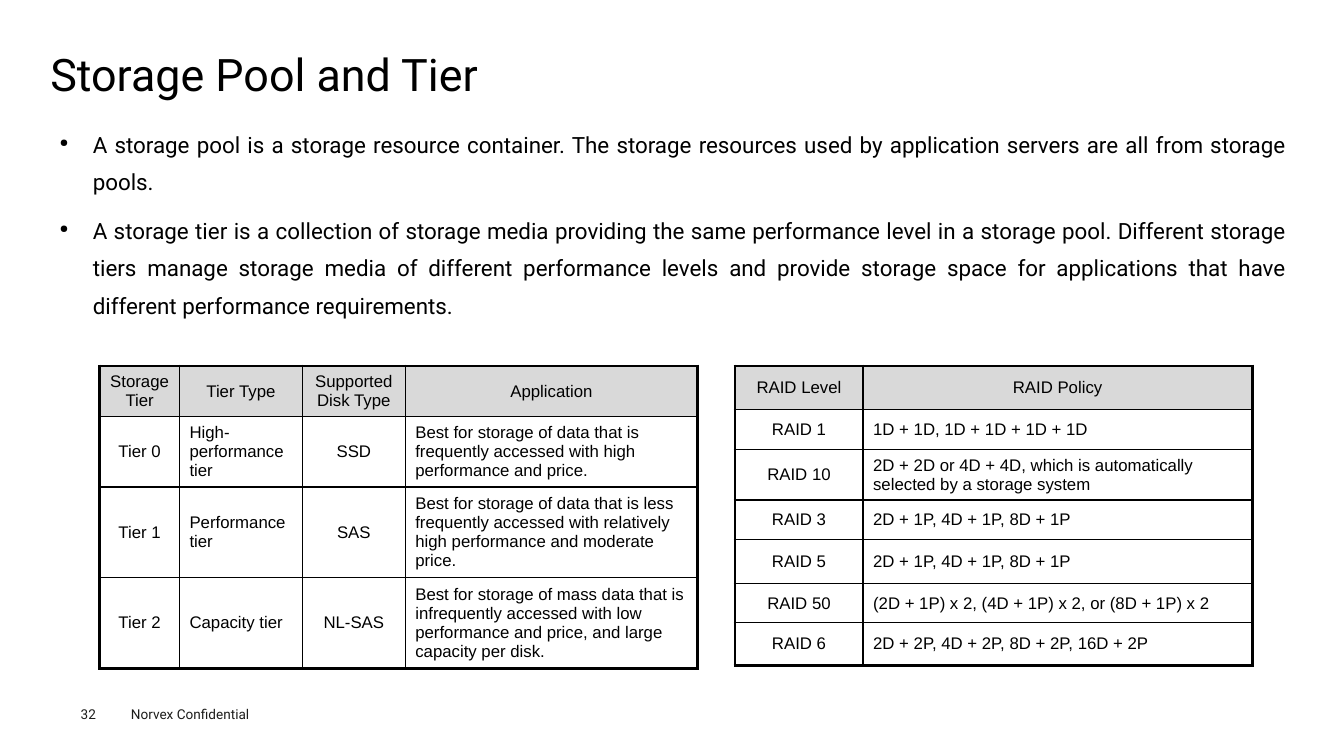
import pptx
import pptx.dml.color
import pptx.enum.text
import pptx.oxml
import pptx.oxml.ns
import pptx.util
from pptx.util import Inches

ALIGN = pptx.enum.text.PP_ALIGN
ANCHOR = pptx.enum.text.MSO_ANCHOR
BLACK, FOOTER_INK, HEADER_FILL = "000000", "1D1D1B", "D9D9D9"
OUTER, INNER = 2.25, 1

BULLETS = [
    "A storage pool is a storage resource container. The storage resources used by "
    "application servers are all from storage pools.",
    "A storage tier is a collection of storage media providing the same performance "
    "level in a storage pool. Different storage tiers manage storage media of different "
    "performance levels and provide storage space for applications that have different "
    "performance requirements.",
]
TIERS = [
    ["Storage Tier", "Tier Type", "Supported Disk Type", "Application"],
    ["Tier 0", "High-performance tier", "SSD",
     "Best for storage of data that is frequently accessed with high performance and price."],
    ["Tier 1", "Performance tier", "SAS",
     "Best for storage of data that is less frequently accessed with relatively high "
     "performance and moderate price."],
    ["Tier 2", "Capacity tier", "NL-SAS",
     "Best for storage of mass data that is infrequently accessed with low performance "
     "and price, and large capacity per disk."],
]
RAID = [
    ["RAID Level", "RAID Policy"],
    ["RAID 1", "1D + 1D, 1D + 1D + 1D + 1D"],
    ["RAID 10", "2D + 2D or 4D + 4D, which is automatically selected by a storage system"],
    ["RAID 3", "2D + 1P, 4D + 1P, 8D + 1P"],
    ["RAID 5", "2D + 1P, 4D + 1P, 8D + 1P"],
    ["RAID 50", "(2D + 1P) x 2, (4D + 1P) x 2, or (8D + 1P) x 2"],
    ["RAID 6", "2D + 2P, 4D + 2P, 8D + 2P, 16D + 2P"],
]


def rgb(color):
    return pptx.dml.color.RGBColor.from_string(color)


def xml(tag, body):
    return pptx.oxml.parse_xml(f"<a:{tag} {pptx.oxml.ns.nsdecls('a')} {body}")


def set_all(obj, values):
    for name, value in values.items():
        setattr(obj, name, value)


def write(p, text, size, font="Roboto", color=BLACK, **formats):
    r = p.add_run()
    r.text = text
    set_all(p, formats)
    set_all(r.font, {"name": font, "size": pptx.util.Pt(size), "bold": False})
    r.font.color.rgb = rgb(color)


def add_box(s, box, insets=(0, 0), anchor=ANCHOR.TOP):
    tf = s.shapes.add_textbox(*map(Inches, box)).text_frame
    x, y = map(Inches, insets)
    set_all(tf, {"word_wrap": True, "vertical_anchor": anchor, "margin_left": x,
                 "margin_right": x, "margin_top": y, "margin_bottom": y})
    return tf


def add_title(s, box):
    tf = add_box(s, box, anchor=ANCHOR.MIDDLE)
    write(tf.paragraphs[0], "Storage Pool and Tier", 32, line_spacing=0.9)


def add_bullets(s, box):
    tf = add_box(s, box, (0.09, 0.04))
    for i, text in enumerate(BULLETS):
        p = tf.add_paragraph() if i else tf.paragraphs[0]
        pPr = p._p.get_or_add_pPr()
        pPr.set("marL", str(Inches(0.33)))
        pPr.set("indent", str(Inches(-0.33)))
        pPr.append(xml("buSzPct", 'val="50000"/>'))
        pPr.append(xml("buChar", 'char="●"/>'))
        write(p, text, 16, alignment=ALIGN.JUSTIFY, line_spacing=1.4,
              space_before=pptx.util.Pt(7.9 if i else 0))


def add_borders(cell, widths):
    tcPr = cell._tc.get_or_add_tcPr()
    for side, width in zip("LRTB", widths):
        tcPr.append(xml(
            f"ln{side}", f'w="{pptx.util.Pt(width)}"><a:solidFill><a:srgbClr val="{BLACK}"/>'
            f'</a:solidFill></a:ln{side}>'))


def add_grid(s, left, top, widths, heights, rows, centered):
    """Table with a grey header row, thick frame and thin inner lines."""
    box = map(Inches, (left, top, sum(widths), sum(heights)))
    table = s.shapes.add_table(len(rows), len(widths), *box).table
    set_all(table, {"first_row": False, "horz_banding": False})
    for column, width in zip(table.columns, widths):
        column.width = Inches(width)
    for row, height in zip(table.rows, heights):
        row.height = Inches(height)
    last_row, last_col = len(rows) - 1, len(widths) - 1
    for i, row in enumerate(rows):
        for j, text in enumerate(row):
            cell = table.cell(i, j)
            edges = (j == 0, j == last_col, i == 0, i == last_row)
            add_borders(cell, [OUTER if edge else INNER for edge in edges])
            if i == 0:
                cell.fill.solid()
                cell.fill.fore_color.rgb = rgb(HEADER_FILL)
            else:
                cell.fill.background()
            set_all(cell, {"vertical_anchor": ANCHOR.MIDDLE,
                           "margin_left": Inches(0.1), "margin_right": Inches(0.1),
                           "margin_top": Inches(0.05), "margin_bottom": Inches(0.05)})
            middle = i == 0 or j in centered
            write(cell.text_frame.paragraphs[0], text, 12, "Arial",
                  alignment=ALIGN.CENTER if middle else ALIGN.LEFT)


def add_footer(s, left, top):
    number = add_box(s, (left, top + 0.05, 0.55, 0.16))
    write(number.paragraphs[0], "32", 9.7, color=FOOTER_INK)
    notice = add_box(s, (left + 0.4, top, 1.6, 0.27), (0.1, 0.05))
    write(notice.paragraphs[0], "Norvex Confidential", 9.7, color=FOOTER_INK)


def main():
    prs = pptx.Presentation()
    set_all(prs, {"slide_width": Inches(13.33), "slide_height": Inches(7.5)})
    s = prs.slides.add_slide(prs.slide_layouts[6])
    # Heading and text
    add_title(s, (0.5, 0.49, 12.35, 0.54))
    add_bullets(s, (0.5, 1.15, 12.35, 2.2))
    # Tables
    add_grid(s, 0.99, 3.63, [0.79, 1.22, 1.02, 2.9], [0.48, 0.67, 0.85, 0.85],
             TIERS, centered=(0, 2))
    add_grid(s, 7.29, 3.63, [1.27, 3.86], [0.43, 0.4, 0.48, 0.39, 0.44, 0.39, 0.42],
             RAID, centered=(0,))
    # Footer
    add_footer(s, 0.8, 6.95)
    prs.save("out.pptx")


if __name__ == "__main__":
    main()
